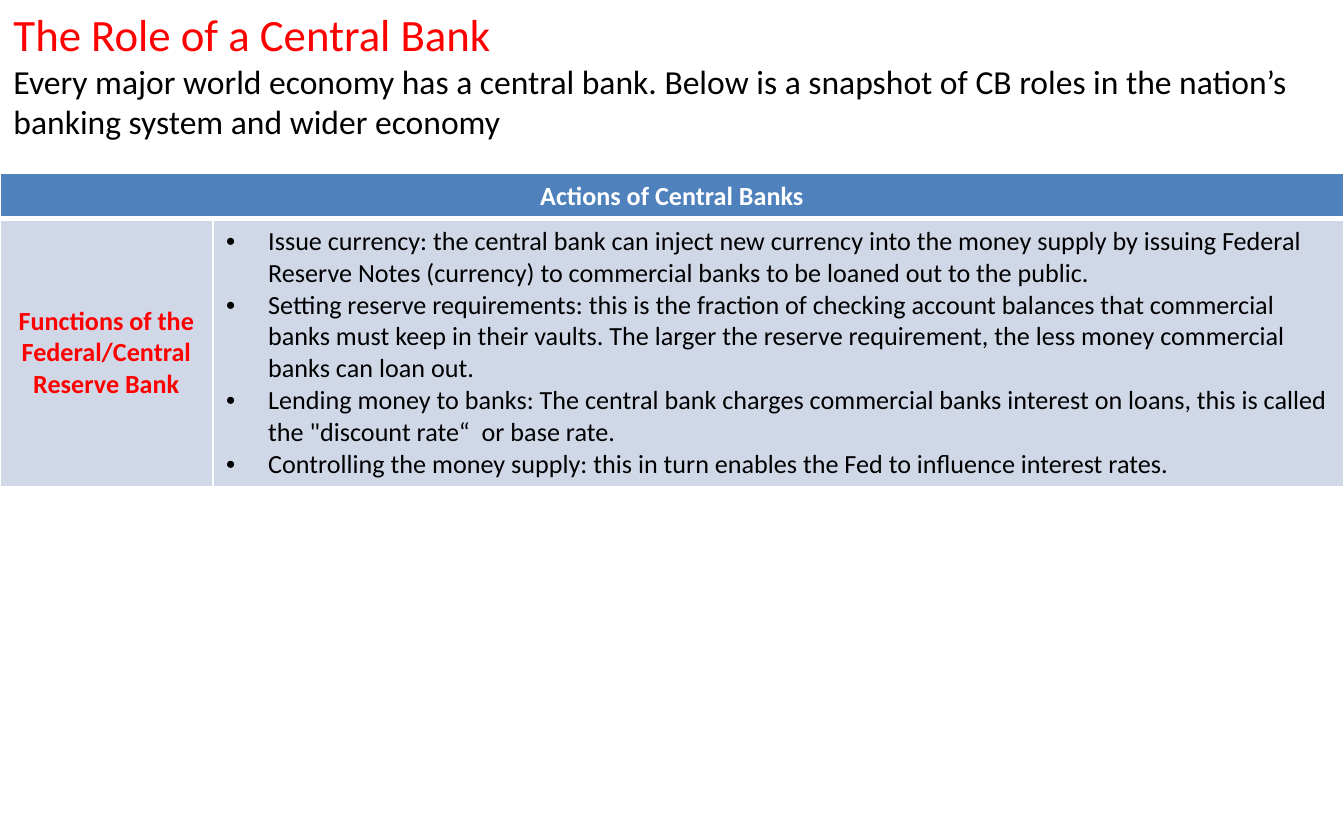
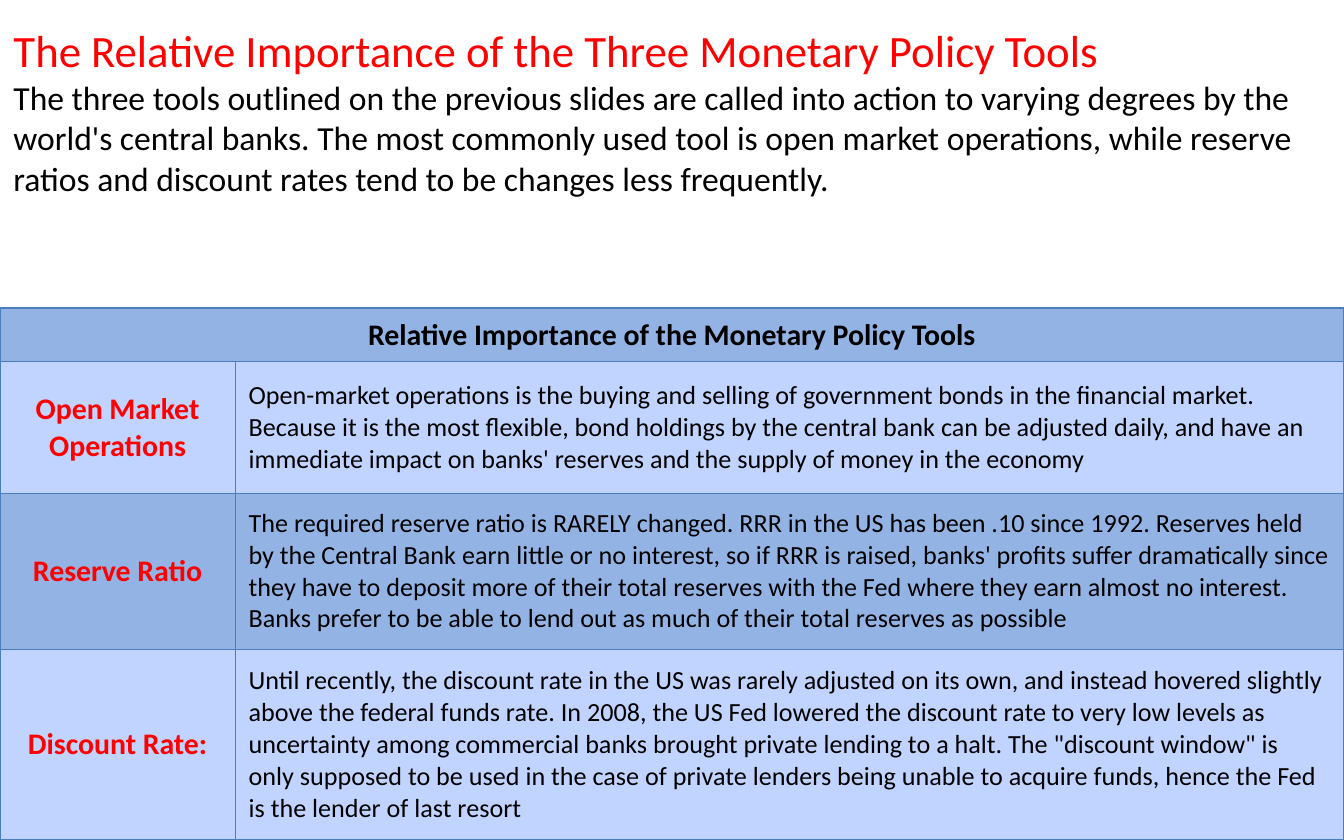
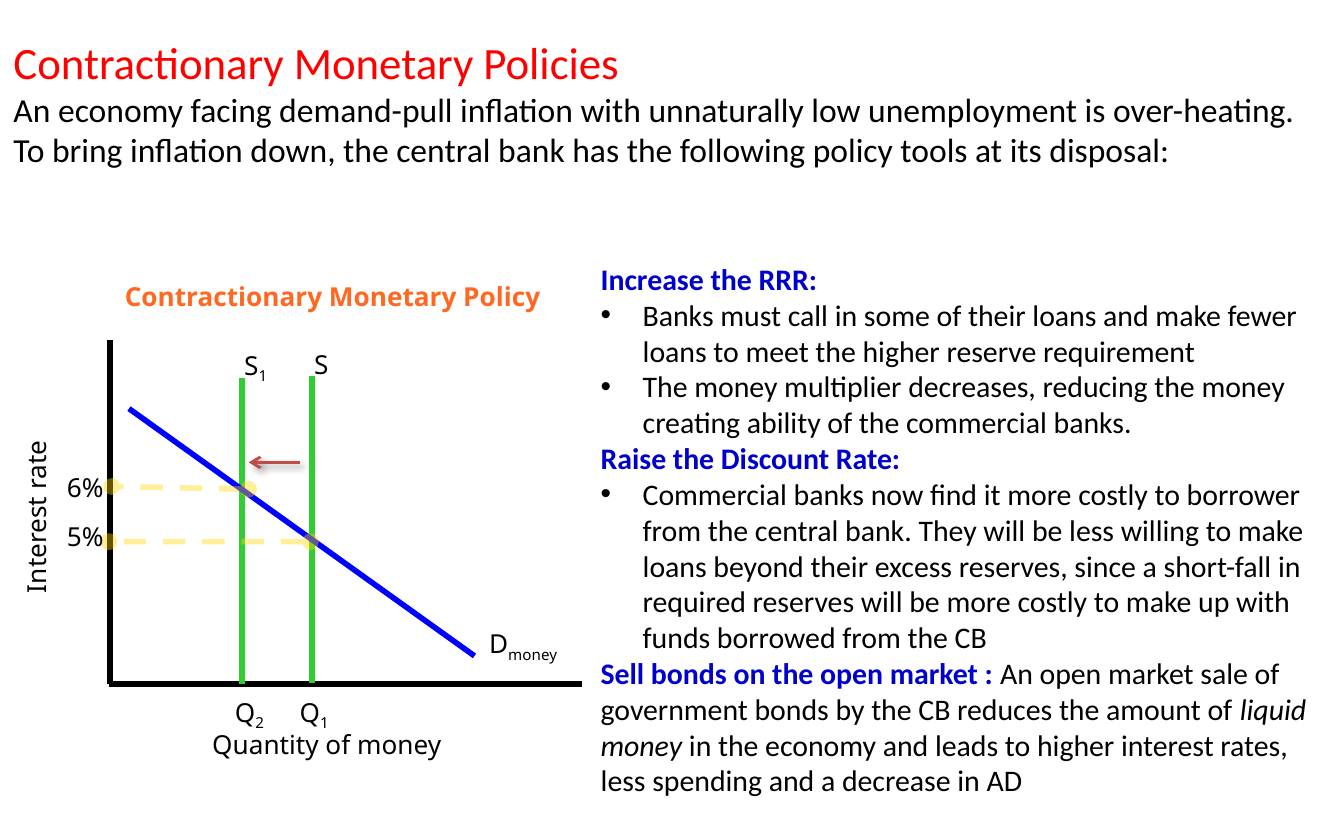
from collections import namedtuple

import pptx
import pptx.dml.color
import pptx.enum.dml
import pptx.enum.shapes
import pptx.enum.text
import pptx.oxml
import pptx.oxml.ns
import pptx.util
from lxml import etree

Pt = pptx.util.Pt
qn = pptx.oxml.ns.qn
CENTER = pptx.enum.text.PP_ALIGN.CENTER
LEFT = pptx.enum.text.PP_ALIGN.LEFT
TOP = pptx.enum.text.MSO_ANCHOR.TOP
MIDDLE = pptx.enum.text.MSO_ANCHOR.MIDDLE
Box = namedtuple("Box", "left top width height")
TableStyle = namedtuple("TableStyle", "header_color header_fill fills border border_width label_size margin")


class Theme:
    """Colours, fonts and type sizes shared by the slides."""

    font, graph_font, graph_title_font = "Calibri", "Noto Sans", "Open Sans"
    title_size, intro_size, policy_size, text_size = 24, 18, 16, 14
    bullet_indent = 22.5
    black, white, red = "000000", "FFFFFF", "FF0000"
    policy, graph_title = "0000CC", "FF6820"
    supply, demand, guide, shift = "32CD32", "0000FF", "FFD700", "BF4C48"
    header_blue, pale_blue = "4F81BD", "D0D8E8"
    band_dark, band_light, band_border = "93B3E5", "C0D4FF", "4B7EBC"


SLIDE = Box(0, 0, 720, 450)
ACTIONS_STYLE = TableStyle(Theme.white, Theme.header_blue, [Theme.pale_blue],
                           Theme.white, 1, Theme.text_size, 3.6)
TOOLS_STYLE = TableStyle(Theme.black, Theme.band_dark, [Theme.band_light, Theme.band_dark],
                         Theme.band_border, 0.75, Theme.policy_size, 2.88)

CENTRAL_BANK_ACTIONS = [
    "Issue currency: the central bank can inject new currency into the money supply by issuing "
    "Federal Reserve Notes (currency) to commercial banks to be loaned out to the public.",
    "Setting reserve requirements: this is the fraction of checking account balances that "
    "commercial banks must keep in their vaults. The larger the reserve requirement, the less "
    "money commercial banks can loan out.",
    "Lending money to banks: The central bank charges commercial banks interest on loans, this "
    "is called the \"discount rate“  or base rate.",
    "Controlling the money supply: this in turn enables the Fed to influence interest rates.",
]
POLICY_TOOLS = [
    ("Open Market Operations", [
        "Open-market operations is the buying and selling of government bonds in the financial "
        "market. Because it is the most flexible, bond holdings by the central bank can be "
        "adjusted daily, and have an immediate impact on banks' reserves and the supply of money "
        "in the economy"]),
    ("Reserve Ratio", [
        "The required reserve ratio is RARELY changed. RRR in the US has been .10 since 1992. "
        "Reserves held by the Central Bank earn little or no interest, so if RRR is raised, "
        "banks' profits suffer dramatically since they have to deposit more of their total "
        "reserves with the Fed where they earn almost no interest. Banks prefer to be able to "
        "lend out as much of their total reserves as possible"]),
    ("Discount Rate:", [
        "Until recently, the discount rate in the US was rarely adjusted on its own, and instead "
        "hovered slightly above the federal funds rate. In 2008, the US Fed lowered the discount "
        "rate to very low levels as uncertainty among commercial banks brought private lending "
        "to a halt. The \"discount window\" is only supposed to be used in the case of private "
        "lenders being unable to acquire funds, hence the Fed is the lender of last resort"]),
]
CONTRACTIONARY_TOOLS = [
    ("Increase the RRR:", [
        "Banks must call in some of their loans and make fewer loans to meet the higher reserve "
        "requirement",
        "The money multiplier decreases, reducing the money creating ability of the commercial "
        "banks."]),
    ("Raise the Discount Rate:", [
        "Commercial banks now find it more costly to borrower from the central bank. They will be "
        "less willing to make loans beyond their excess reserves, since a short-fall in required "
        "reserves will be more costly to make up with funds borrowed from the CB"]),
]
BOND_SALE = [
    ("An open market sale of government bonds by the CB reduces the amount of ", False),
    ("liquid money", True),
    (" in the economy and leads to higher interest rates, less spending and a decrease in AD", False),
]


def rgb(color):
    """Turn a hex string into a colour."""
    return pptx.dml.color.RGBColor.from_string(color)


def points(*lengths):
    """Turn numbers into lengths in points."""
    return [Pt(length) for length in lengths]


def next_paragraph(frame):
    """Give the empty first paragraph of a frame, or add one."""
    first = frame.paragraphs[0]
    return frame.add_paragraph() if first.runs else first


def set_bullet(paragraph, bulleted):
    """Turn the bullet and hanging indent of a paragraph on or off."""
    properties = paragraph._p.get_or_add_pPr()
    indent = Pt(Theme.bullet_indent) if bulleted else 0
    properties.set("marL", str(indent))
    properties.set("indent", str(-indent))
    if bulleted:
        etree.SubElement(properties, qn("a:buFont"), typeface="Arial")
        etree.SubElement(properties, qn("a:buChar"), char="•")
    else:
        etree.SubElement(properties, qn("a:buNone"))


def write(frame, text, size, color=Theme.black, font=Theme.font, bold=False,
          align=LEFT, bulleted=False):
    """Write one paragraph in a uniform style and return it."""
    paragraph = next_paragraph(frame)
    set_bullet(paragraph, bulleted)
    paragraph.space_before = Pt(0)
    paragraph.alignment = align
    paragraph.font.name = font
    paragraph.font.size = Pt(size)
    paragraph.font.bold = bold
    paragraph.font.color.rgb = rgb(color)
    paragraph.add_run().text = text
    return paragraph


def place(shape, box):
    """Move a placeholder to a box and anchor its text at the top."""
    shape.left, shape.top, shape.width, shape.height = points(*box)
    frame = shape.text_frame
    frame.word_wrap = True
    frame.auto_size = pptx.enum.text.MSO_AUTO_SIZE.NONE
    frame.vertical_anchor = TOP
    return frame


def add_heading(slide, box, title, intro):
    """Fill the title placeholder with a red title and its introduction."""
    frame = place(slide.shapes.title, box)
    write(frame, title, Theme.title_size, Theme.red)
    write(frame, intro, Theme.intro_size)


def set_borders(cell, color, width, bottom_width):
    """Draw the four borders of a cell."""
    properties = cell._tc.get_or_add_tcPr()
    for side in "LRTB":
        weight = bottom_width if side == "B" else width
        line = etree.SubElement(properties, qn(f"a:ln{side}"), w=str(Pt(weight)))
        fill = etree.SubElement(line, qn("a:solidFill"))
        etree.SubElement(fill, qn("a:srgbClr"), val=color)


def style_cell(cell, style, fill, anchor=MIDDLE, bottom_width=None):
    """Set borders, fill, margins and anchor of a cell."""
    set_borders(cell, style.border, style.border_width, bottom_width or style.border_width)
    cell.fill.solid()
    cell.fill.fore_color.rgb = rgb(fill)
    cell.margin_top = cell.margin_bottom = Pt(style.margin)
    cell.vertical_anchor = anchor


def add_labelled_table(slide, box, style, header, rows, label_width, row_heights,
                       bulleted=False, header_rule=None):
    """Build a table with a merged header and a red label beside each text."""
    table = slide.shapes.add_table(len(rows) + 1, 2, *points(*box)).table
    table.horz_banding = False
    for column, width in zip(table.columns, (label_width, box.width - label_width)):
        column.width = Pt(width)
    for row, height in zip(table.rows, row_heights):
        row.height = Pt(height)
    for cell in table.rows[0].cells:
        style_cell(cell, style, style.header_fill, bottom_width=header_rule)
    table.cell(0, 0).merge(table.cell(0, 1))
    write(table.cell(0, 0).text_frame, header, style.label_size, style.header_color,
          bold=True, align=CENTER)
    for index, (label, texts) in enumerate(rows):
        label_cell, text_cell = table.rows[index + 1].cells
        fill = style.fills[index % len(style.fills)]
        style_cell(label_cell, style, fill)
        style_cell(text_cell, style, fill, TOP if bulleted else MIDDLE)
        write(label_cell.text_frame, label, style.label_size, Theme.red, bold=True, align=CENTER)
        for text in texts:
            write(text_cell.text_frame, text, Theme.text_size, bulleted=bulleted)


def add_policy_list(slide, box):
    """Fill the body placeholder with the contractionary tools."""
    frame = place(slide.placeholders[1], box)
    for heading, effects in CONTRACTIONARY_TOOLS:
        write(frame, heading, Theme.policy_size, Theme.policy, bold=True)
        for effect in effects:
            write(frame, effect, Theme.policy_size, bulleted=True)
    paragraph = write(frame, "Sell bonds on the open market : ", Theme.policy_size)
    paragraph.runs[0].font.bold = True
    paragraph.runs[0].font.color.rgb = rgb(Theme.policy)
    for text, italic in BOND_SALE:
        run = paragraph.add_run()
        run.text = text
        run.font.italic = italic


def add_line(shapes, box, start, end, color, width=3):
    """Draw a plain line between two points of a box."""
    ends = (box.left + start[0], box.top + start[1], box.left + end[0], box.top + end[1])
    line = shapes.add_connector(pptx.enum.shapes.MSO_CONNECTOR.STRAIGHT, *points(*ends))
    line.line.color.rgb = rgb(color)
    line.line.width = Pt(width)
    etree.SubElement(line._element.spPr, qn("a:effectLst"))
    return line


def add_guide(shapes, box, start, end):
    """Draw a translucent dashed guide with round ends."""
    guide = add_line(shapes, box, start, end, Theme.guide)
    guide.line.dash_style = pptx.enum.dml.MSO_LINE.DASH
    outline = guide._element.spPr.find(qn("a:ln"))
    etree.SubElement(outline.find(".//" + qn("a:srgbClr")), qn("a:alpha"), val="40000")
    for tag in ("a:headEnd", "a:tailEnd"):
        etree.SubElement(outline, qn(tag), type="oval")


def add_shift_arrow(shapes, box, start, end):
    """Draw the shadowed arrow that marks the shift of supply."""
    arrow = add_line(shapes, box, start, end, Theme.shift, 1.5)
    properties = arrow._element.spPr
    etree.SubElement(properties.find(qn("a:ln")), qn("a:tailEnd"), type="arrow")
    shadow = etree.SubElement(properties.find(qn("a:effectLst")), qn("a:outerShdw"),
                              blurRad=str(Pt(4)), dist=str(Pt(3)), dir="2700000")
    color = etree.SubElement(shadow, qn("a:srgbClr"), val=Theme.black)
    etree.SubElement(color, qn("a:alpha"), val="40000")


def add_label(shapes, box, place_in_box, text, subscript="", color=Theme.black,
              font=Theme.graph_font, bold=False, rotation=0):
    """Write a graph label with an optional subscript."""
    left, top, width, height = place_in_box
    label = shapes.add_textbox(*points(box.left + left, box.top + top, width, height))
    label.rotation = rotation
    label.text_frame.word_wrap = True
    paragraph = write(label.text_frame, text, Theme.text_size, color, font, bold)
    if subscript:
        run = paragraph.add_run()
        run.text = subscript
        run._r.get_or_add_rPr().set("baseline", "-25000")


def add_money_market(slide, box):
    """Draw the money market graph with supply shifting left."""
    shapes = slide.shapes.add_group_shape().shapes
    axis, base, height = 59, 222.5, 28.8
    add_line(shapes, box, (axis, 38.2), (axis, base), Theme.black)
    add_line(shapes, box, (axis - 0.7, base), (311.8, base), Theme.black)
    add_label(shapes, box, (-41, 103.7, 125.3, height), "Interest rate", rotation=270)
    add_label(shapes, box, (106.6, 242.6, 178, height), "Quantity of money")
    add_label(shapes, box, (59.8, 2.9, 271.4, 24.5), "Contractionary Monetary Policy",
              color=Theme.graph_title, font=Theme.graph_title_font, bold=True)
    supplies = [(167, 57.6, "", "1", 153.4), (129.6, 58.3, "1", "2", 118.8)]
    for x, top, supply_number, quantity_number, quantity_left in supplies:
        add_line(shapes, box, (x, top), (x, top + 164.2), Theme.supply)
        add_label(shapes, box, (x - 5.8, top - 18.7, 44, height), "S", supply_number)
        add_label(shapes, box, (quantity_left, 225.4, 38, height), "Q", quantity_number)
    add_line(shapes, box, (69.1, 74.9), (254.2, 207.4), Theme.demand)
    add_label(shapes, box, (254.9, 188.6, 73.4, height), "D", "money")
    rates = [("5%", 131, (166.3, 146.2), (58.3, 146.2)),
             ("6%", 105.1, (133.2, 118.1), (59.8, 116.6))]
    for rate, top, start, end in rates:
        add_guide(shapes, box, start, end)
        add_label(shapes, box, (28.8, top, 57.6, height), rate)
    add_shift_arrow(shapes, box, (160.6, 103.7), (133.2, 103.7))


def build_role_slide(slide):
    """Build the slide on the role of a central bank."""
    add_heading(slide, Box(0, 0, SLIDE.width, 80), "The Role of a Central Bank",
                "Every major world economy has a central bank. Below is a snapshot of CB roles "
                "in the nation’s banking system and wider economy")
    rows = [("Functions of the Federal/Central Reserve Bank", CENTRAL_BANK_ACTIONS)]
    add_labelled_table(slide, Box(0, 93, SLIDE.width, 166), ACTIONS_STYLE,
                       "Actions of Central Banks", rows, 114, [24, 142],
                       bulleted=True, header_rule=3)


def build_tools_slide(slide):
    """Build the slide comparing the three policy tools."""
    add_heading(slide, Box(0, 8.8, SLIDE.width, 101.5),
                "The Relative Importance of the Three Monetary Policy Tools",
                "The three tools outlined on the previous slides are called into action to "
                "varying degrees by the world's central banks. The most commonly used tool is "
                "open market operations, while reserve ratios and discount rates tend to be "
                "changes less frequently.")
    add_labelled_table(slide, Box(0, 165, SLIDE.width, 285), TOOLS_STYLE,
                       "Relative Importance of the Monetary Policy Tools", POLICY_TOOLS,
                       126, [28.8, 70.5, 83.5, 102.2])


def build_contraction_slide(slide):
    """Build the slide on contractionary policies."""
    add_heading(slide, Box(0, 15, SLIDE.width, 80), "Contractionary Monetary Policies",
                "An economy facing demand-pull inflation with unnaturally low unemployment is "
                "over-heating. To bring inflation down, the central bank has the following "
                "policy tools at its disposal:")
    add_money_market(slide, Box(0, 144, 332, 272))
    add_policy_list(slide, Box(314.6, 136, 405.4, 298))


def main():
    """Build and save the presentation."""
    presentation = pptx.Presentation()
    presentation.slide_width, presentation.slide_height = points(SLIDE.width, SLIDE.height)
    title_and_content, title_only = presentation.slide_layouts[1], presentation.slide_layouts[5]
    for build, layout in ((build_role_slide, title_only), (build_tools_slide, title_only),
                          (build_contraction_slide, title_and_content)):
        build(presentation.slides.add_slide(layout))
    presentation.save("out.pptx")


if __name__ == "__main__":
    main()
